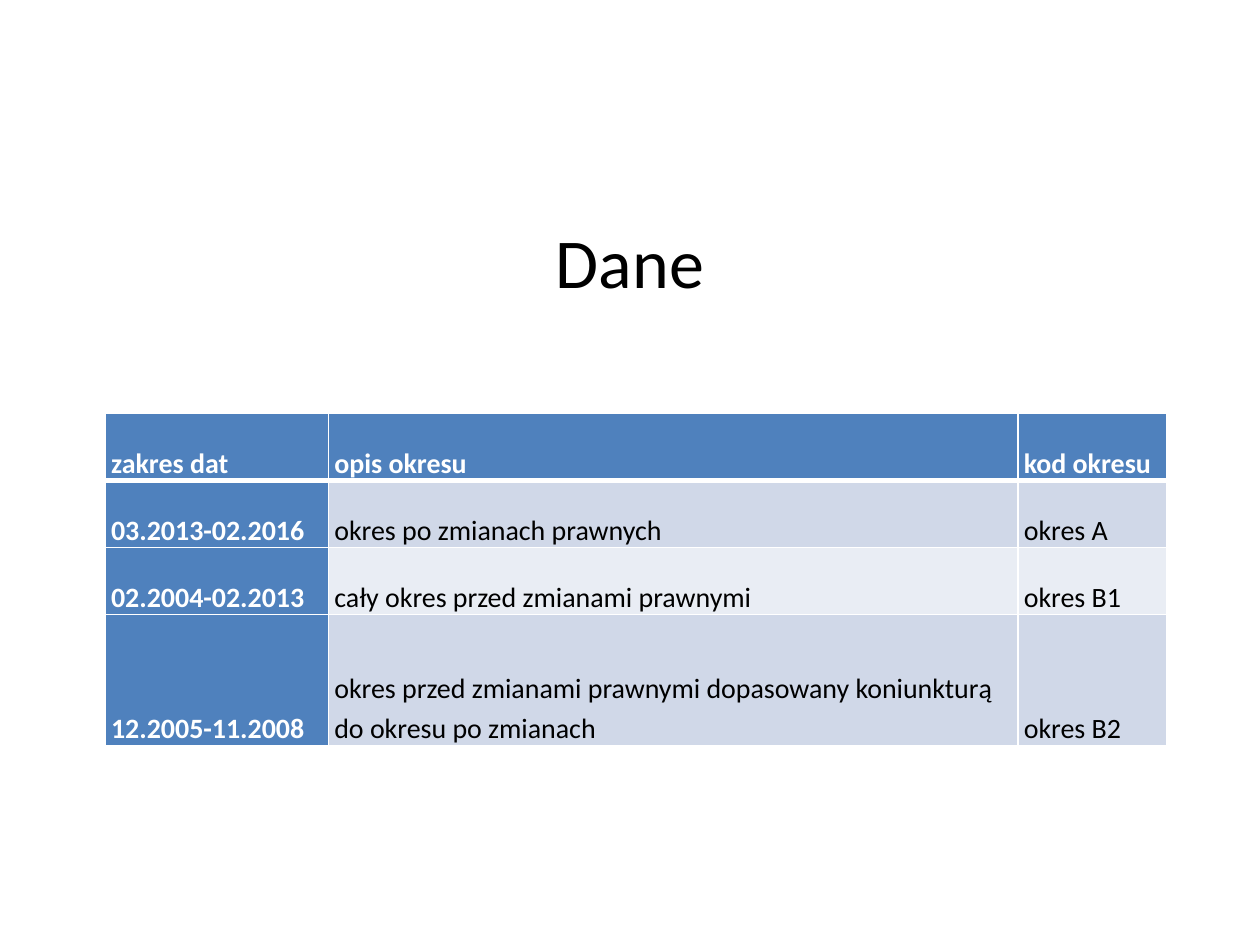
from lxml.etree import SubElement
from pptx import Presentation
from pptx.dml.color import RGBColor
from pptx.enum.text import MSO_ANCHOR, PP_ALIGN
from pptx.oxml.ns import qn
from pptx.util import Cm, Pt

BLUE, WHITE, BLACK = "4F81BD", "FFFFFF", "000000"
BANDS = ["D0D8E8", "E9EDF4"]
COLS = [4.5, 13.9, 3]
TALL = [1.35, 1.35, 1.35, 2.64]
ROWS = [
    ["zakres dat", "opis okresu", "kod okresu"],
    ["03.2013-02.2016", "okres po zmianach prawnych", "okres A"],
    ["02.2004-02.2013", "cały okres przed zmianami prawnymi", "okres B1"],
    ["12.2005-11.2008",
     "okres przed zmianami prawnymi dopasowany koniunkturą do okresu po zmianach",
     "okres B2"],
]


def rgb(code):
    return RGBColor.from_string(code)


def write(frame, text, size=16, color=BLACK, bold=False,
          align=PP_ALIGN.LEFT, space=None):
    frame.text = text
    para = frame.paragraphs[0]
    para.alignment = align
    para.line_spacing = space
    font = para.runs[0].font
    font.name, font.size, font.bold = "Calibri", Pt(size), bold
    font.color.rgb = rgb(color)


def border(cell, side, width):
    props = cell._tc.get_or_add_tcPr()
    line = SubElement(props, qn("a:ln" + side), w=str(Pt(width)))
    fill = SubElement(line, qn("a:solidFill"))
    SubElement(fill, qn("a:srgbClr"), val=WHITE)


def add_title(slide, left, top, width, height):
    title = slide.shapes.title
    title.left, title.top = Cm(left), Cm(top)
    title.width, title.height = Cm(width), Cm(height)
    title.text_frame.vertical_anchor = MSO_ANCHOR.MIDDLE
    write(title.text_frame, "Dane", size=40, align=PP_ALIGN.CENTER)


def style(cell, text, row, col):
    head = row == 0 or col == 0
    # Borders: thick rule under the header row
    for side in "LRTB":
        thick = (row, side) in [(0, "B"), (1, "T")]
        border(cell, side, 3 if thick else 1)
    cell.fill.solid()
    cell.fill.fore_color.rgb = rgb(BLUE if head else BANDS[(row - 1) % 2])
    cell.margin_left = cell.margin_right = Cm(0.12)
    cell.margin_top = cell.margin_bottom = 0
    cell.vertical_anchor = MSO_ANCHOR.BOTTOM
    write(cell.text_frame, text, color=WHITE if head else BLACK,
          bold=head, space=1.15)


def add_periods(slide, left, top):
    table = slide.shapes.add_table(
        len(ROWS), len(COLS), Cm(left), Cm(top),
        Cm(sum(COLS)), Cm(sum(TALL))).table
    table.first_col = True
    for col, width in zip(table.columns, COLS):
        col.width = Cm(width)
    for row, height in zip(table.rows, TALL):
        row.height = Cm(height)
    for r, texts in enumerate(ROWS):
        for c, text in enumerate(texts):
            style(table.cell(r, c), text, r, c)


def main():
    deck = Presentation()
    deck.slide_width, deck.slide_height = Cm(25.4), Cm(19.05)
    slide = deck.slides.add_slide(deck.slide_layouts[5])
    add_title(slide, 1.27, 4, 22.86, 2.5)
    add_periods(slide, 2.12, 8.34)
    deck.save("out.pptx")


if __name__ == "__main__":
    main()
